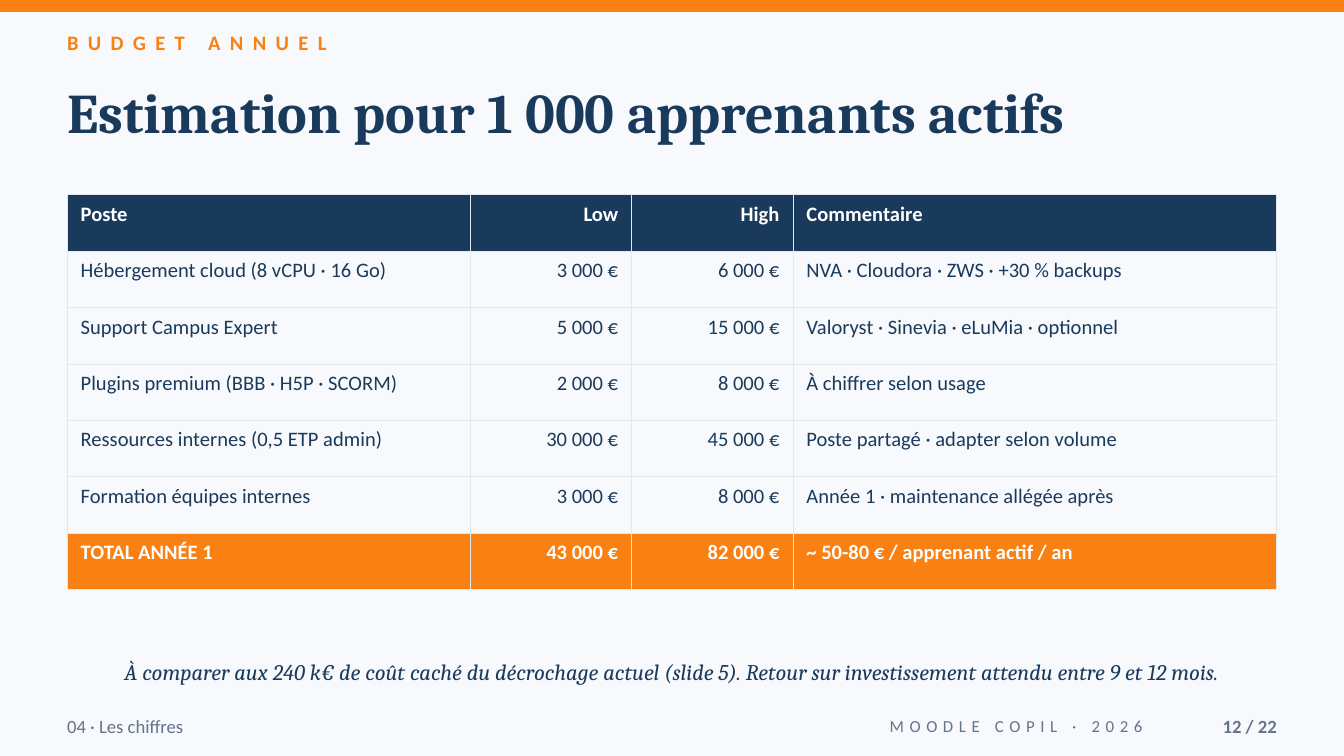
from dataclasses import dataclass

from lxml import etree
from pptx import Presentation
from pptx import util as u
from pptx.dml.color import RGBColor
from pptx.enum import shapes, text
from pptx.oxml.ns import qn
from pptx.slide import Slide
from pptx.table import _Cell as Cell
from pptx.text.text import TextFrame

ORANGE = RGBColor(0xF9, 0x80, 0x12)
NAVY = RGBColor(0x1A, 0x3A, 0x5C)
SLATE = RGBColor(0x64, 0x74, 0x8B)
WHITE = RGBColor(0xFF, 0xFF, 0xFF)
BACKGROUND = RGBColor(0xF7, 0xF9, 0xFC)
BORDER = RGBColor(0xE2, 0xE8, 0xF0)

LEFT, RIGHT, CENTER = text.PP_ALIGN.LEFT, text.PP_ALIGN.RIGHT, text.PP_ALIGN.CENTER
TOP, MIDDLE = text.MSO_ANCHOR.TOP, text.MSO_ANCHOR.MIDDLE

# The slide is a grid of square units, 100 columns wide.
COLUMNS, ROWS = 100, 56.25
UNIT = u.Inches(0.1)
MARGIN, CONTENT = 5, 90
FOOTER_TOP, FOOTER_HEIGHT = 52.5, 3
TABLE_TOP, TABLE_ROW = 14.5, 4.2
TABLE_COLUMNS = (30, 12, 12, 36)
TABLE_ALIGNMENT = (LEFT, RIGHT, RIGHT, LEFT)


@dataclass(frozen=True)
class Style:
    size: float
    color: RGBColor
    font: str = "Calibri"
    bold: bool = False
    italic: bool = False
    spacing: float = 0


@dataclass(frozen=True)
class Box:
    column: float
    row: float
    width: float
    height: float

    def lengths(self) -> tuple[int, ...]:
        return tuple(grid(n) for n in (self.column, self.row, self.width, self.height))


@dataclass(frozen=True)
class Label:
    wording: str
    box: Box
    style: Style
    alignment: text.PP_ALIGN = LEFT
    anchor: text.MSO_ANCHOR = MIDDLE


TITLE = Label("Estimation pour 1 000 apprenants actifs", Box(MARGIN, 5.8, CONTENT, 7.5),
              Style(30, NAVY, "Cambria", bold=True), anchor=TOP)
LABELS = (
    Label("BUDGET ANNUEL", Box(MARGIN, 2.2, CONTENT, 3),
          Style(11, ORANGE, bold=True, spacing=5), anchor=TOP),
    Label("À comparer aux 240 k€ de coût caché du décrochage actuel (slide 5). "
          "Retour sur investissement attendu entre 9 et 12 mois.",
          Box(MARGIN, 48, CONTENT, 4), Style(12, NAVY, "Cambria", italic=True), CENTER),
    Label("04 · Les chiffres", Box(MARGIN, FOOTER_TOP, 60, FOOTER_HEIGHT), Style(10, SLATE)),
    Label("MOODLE COPIL · 2026", Box(66, FOOTER_TOP, 19, FOOTER_HEIGHT),
          Style(9, SLATE, spacing=3), RIGHT),
    Label("12 / 22", Box(85, FOOTER_TOP, 10, FOOTER_HEIGHT),
          Style(10, SLATE, bold=True), RIGHT),
)
BUDGET = (
    ("Poste", "Low", "High", "Commentaire"),
    ("Hébergement cloud (8 vCPU · 16 Go)", "3 000 €", "6 000 €",
     "NVA · Cloudora · ZWS · +30 % backups"),
    ("Support Campus Expert", "5 000 €", "15 000 €", "Valoryst · Sinevia · eLuMia · optionnel"),
    ("Plugins premium (BBB · H5P · SCORM)", "2 000 €", "8 000 €", "À chiffrer selon usage"),
    ("Ressources internes (0,5 ETP admin)", "30 000 €", "45 000 €",
     "Poste partagé · adapter selon volume"),
    ("Formation équipes internes", "3 000 €", "8 000 €", "Année 1 · maintenance allégée après"),
    ("TOTAL ANNÉE 1", "43 000 €", "82 000 €", "~ 50-80 € / apprenant actif / an"),
)
BODY_STYLE = Style(11, NAVY)
STRONG_STYLE = Style(11, WHITE, bold=True)
ROW_FILLS = {0: NAVY, len(BUDGET) - 1: ORANGE}


def grid(units: float) -> int:
    return round(units * UNIT)


def write(frame: TextFrame, wording: str, style: Style, alignment: text.PP_ALIGN) -> None:
    paragraph = frame.paragraphs[0]
    paragraph.alignment = alignment
    run = paragraph.add_run()
    run.text = wording
    font = run.font
    font.name, font.size = style.font, u.Pt(style.size)
    font.bold, font.italic = style.bold, style.italic
    font.color.rgb = style.color
    if style.spacing:
        run._r.get_or_add_rPr().set("spc", str(round(style.spacing * 100)))


def fill_label(shape, label: Label) -> None:
    shape.left, shape.top, shape.width, shape.height = label.box.lengths()
    frame = shape.text_frame
    frame.margin_left = frame.margin_right = frame.margin_top = frame.margin_bottom = 0
    frame.word_wrap = True
    frame.auto_size = text.MSO_AUTO_SIZE.NONE
    frame.vertical_anchor = label.anchor
    write(frame, label.wording, label.style, label.alignment)


def add_top_bar(slide: Slide) -> None:
    bar = slide.shapes.add_shape(shapes.MSO_SHAPE.RECTANGLE, *Box(0, 0, COLUMNS, 0.8).lengths())
    bar.shadow.inherit = False
    bar.fill.solid()
    bar.fill.fore_color.rgb = ORANGE
    bar.line.color.rgb = ORANGE
    bar.line.width = u.Pt(1)


def add_borders(cell: Cell) -> None:
    """Put the four edges first, as the schema wants them before the fill."""
    properties = cell._tc.get_or_add_tcPr()
    for index, edge in enumerate(("a:lnL", "a:lnR", "a:lnT", "a:lnB")):
        line = etree.Element(qn(edge), w=str(u.Pt(0.5)))
        solid = etree.SubElement(line, qn("a:solidFill"))
        etree.SubElement(solid, qn("a:srgbClr"), val=str(BORDER))
        properties.insert(index, line)


def add_budget_table(slide: Slide) -> None:
    box = Box(MARGIN, TABLE_TOP, CONTENT, TABLE_ROW * len(BUDGET))
    table = slide.shapes.add_table(len(BUDGET), len(TABLE_COLUMNS), *box.lengths()).table
    for column, width in zip(table.columns, TABLE_COLUMNS):
        column.width = grid(width)
    for row_index, entries in enumerate(BUDGET):
        table.rows[row_index].height = grid(TABLE_ROW)
        fill = ROW_FILLS.get(row_index)
        style = STRONG_STYLE if fill else BODY_STYLE
        for column_index, (entry, alignment) in enumerate(zip(entries, TABLE_ALIGNMENT)):
            cell = table.cell(row_index, column_index)
            if fill:
                cell.fill.solid()
                cell.fill.fore_color.rgb = fill
            else:
                cell.fill.background()
            add_borders(cell)
            write(cell.text_frame, entry, style, alignment)


def main() -> None:
    presentation = Presentation()
    presentation.slide_width, presentation.slide_height = grid(COLUMNS), grid(ROWS)
    slide = presentation.slides.add_slide(presentation.slide_layouts.get_by_name("Title Only"))
    slide.background.fill.solid()
    slide.background.fill.fore_color.rgb = BACKGROUND
    add_top_bar(slide)
    fill_label(slide.shapes.title, TITLE)
    add_budget_table(slide)
    for label in LABELS:
        fill_label(slide.shapes.add_textbox(*label.box.lengths()), label)
    presentation.save("out.pptx")


if __name__ == "__main__":
    main()
